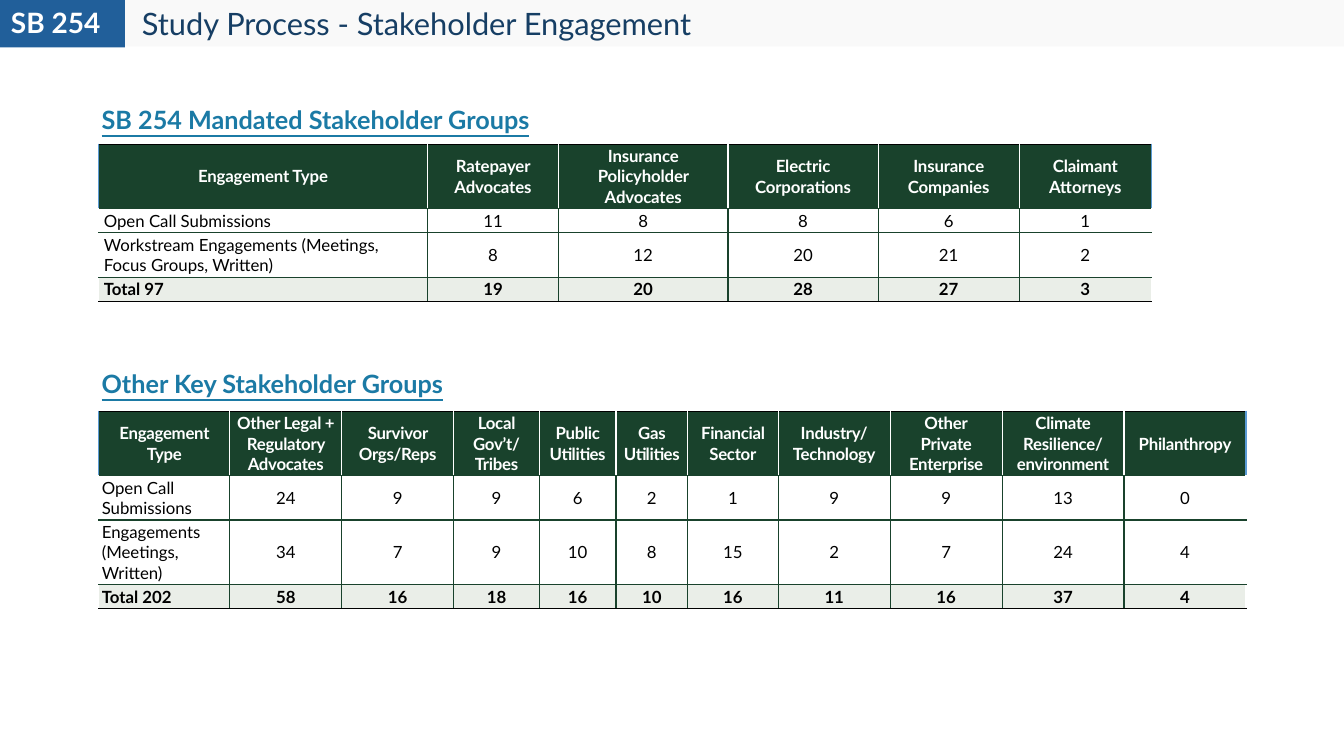
from lxml import etree
from pptx import Presentation
from pptx.dml.color import RGBColor
from pptx.enum.shapes import MSO_SHAPE
from pptx.enum.text import MSO_ANCHOR, PP_ALIGN
from pptx.oxml.ns import qn
from pptx.util import Inches, Pt

RECTANGLE = MSO_SHAPE.RECTANGLE
TOP, MIDDLE = MSO_ANCHOR.TOP, MSO_ANCHOR.MIDDLE
LEFT, CENTER = PP_ALIGN.LEFT, PP_ALIGN.CENTER

WHITE = RGBColor(0xFF, 0xFF, 0xFF)
BLACK = RGBColor(0x00, 0x00, 0x00)
BAND_GRAY = RGBColor(0xF9, 0xF9, 0xF9)
TAG_BLUE = RGBColor(0x21, 0x5F, 0x9A)
TITLE_NAVY = RGBColor(0x16, 0x3E, 0x64)
HEADING_TEAL = RGBColor(0x1B, 0x7A, 0xA5)
GREEN = RGBColor(0x19, 0x42, 0x2C)
TOTAL_GREEN = RGBColor(0xEA, 0xEE, 0xE8)
EDGE_BLUE = RGBColor(0x5B, 0x9B, 0xD5)

MANDATED_GROUPS = [
    # group, width, open call submissions, engagements
    ("Ratepayer Advocates", 1.3, 11, 8),
    ("Insurance Policyholder Advocates", 1.68, 8, 12),
    ("Electric Corporations", 1.49, 8, 20),
    ("Insurance Companies", 1.4, 6, 21),
    ("Claimant Attorneys", 1.31, 1, 2),
]
OTHER_GROUPS = [
    ("Other Legal + Regulatory Advocates", 1.11, 24, 34),
    ("Survivor Orgs/Reps", 1.11, 9, 7),
    ("Local Gov’t/\nTribes", 0.85, 9, 9),
    ("Public Utilities", 0.76, 6, 10),
    ("Gas Utilities", 0.71, 2, 8),
    ("Financial Sector", 0.9, 1, 15),
    ("Industry/\nTechnology", 1.11, 9, 2),
    ("Other\nPrivate Enterprise", 1.11, 9, 7),
    ("Climate Resilience/\nenvironment", 1.21, 13, 24),
    ("Philanthropy", 1.21, 0, 4),
]


class StakeholderSlide:
    font_name = "Lato"
    table_size = 12

    def __init__(self, slide):
        self.slide = slide

    def band(self, left, top, width, height, color):
        band = self.slide.shapes.add_shape(
            RECTANGLE, Inches(left), Inches(top), Inches(width), Inches(height))
        band.shadow.inherit = False
        band.fill.solid()
        band.fill.fore_color.rgb = color
        band.line.fill.background()

    def add_runs(self, paragraph, text, size, color, bold=False, underline=False, spacing=0):
        """Add text run by run, with a line break at each newline; spacing is in points."""
        for i, line in enumerate(text.split("\n")):
            if i:
                paragraph.add_line_break()
            run = paragraph.add_run()
            run.text = line
            font = run.font
            font.name, font.size, font.bold = self.font_name, Pt(size), bold
            font.underline = underline
            font.color.rgb = color
            if spacing:
                run._r.get_or_add_rPr().set("spc", str(round(spacing * 100)))

    def text(self, left, top, width, height, text, size, color, **style):
        frame = self.slide.shapes.add_textbox(
            Inches(left), Inches(top), Inches(width), Inches(height)).text_frame
        frame.word_wrap = True
        paragraph = frame.paragraphs[0]
        paragraph.line_spacing = 0.9
        self.add_runs(paragraph, text, size, color, **style)

    def section_heading(self, top, width, text):
        self.text(0.91, top, width, 0.41, text, 18, HEADING_TEAL, bold=True, underline=True)

    def borders(self, cell, **colors):
        properties = cell._tc.get_or_add_tcPr()
        for side, color in colors.items():
            line = etree.SubElement(properties, qn(f"a:ln{side}"), w=str(Pt(1)))
            fill = etree.SubElement(line, qn("a:solidFill"))
            etree.SubElement(fill, qn("a:srgbClr"), val=str(color))

    def engagement_table(self, top, label_width, groups, labels, heights, inset, spacing):
        """Tabulate both kinds of engagement for each group, with computed totals."""
        names, widths, submissions, engagements = zip(*groups)
        totals = [sum(pair) for pair in zip(submissions, engagements)]
        labels = ["Engagement Type", *labels, f"Total {sum(totals)}"]
        rows = [[label, *values] for label, values in
                zip(labels, (names, submissions, engagements, totals))]
        widths = [label_width, *widths]
        table = self.slide.shapes.add_table(
            len(rows), len(widths), Inches(0.98), Inches(top),
            Inches(sum(widths)), Inches(sum(heights))).table
        table.first_row = table.horz_banding = False
        for column, width in zip(table.columns, widths):
            column.width = Inches(width)
        last_row, last_column = len(rows) - 1, len(widths) - 1

        for r, (values, height) in enumerate(zip(rows, heights)):
            table.rows[r].height = Inches(height)
            header, total = r == 0, r == last_row
            inner, edge = (WHITE, EDGE_BLUE) if header else (GREEN, WHITE)
            fill = GREEN if header else TOTAL_GREEN if total else WHITE
            for c, value in enumerate(values):
                cell = table.cell(r, c)
                row_label = c == 0 and not header
                cell.margin_left = cell.margin_right = Inches(inset)
                cell.margin_top = cell.margin_bottom = Inches(0.02)
                cell.vertical_anchor = TOP if row_label else MIDDLE
                self.borders(cell,
                             L=edge if c == 0 else inner,
                             R=edge if c == last_column else inner,
                             T=BLACK if header else GREEN,
                             B=BLACK if total else GREEN)
                cell.fill.solid()
                cell.fill.fore_color.rgb = fill
                paragraph = cell.text_frame.paragraphs[0]
                paragraph.alignment = LEFT if row_label else CENTER
                self.add_runs(paragraph, str(value), self.table_size,
                              WHITE if header else BLACK, bold=header or total,
                              spacing=spacing if header else 0)


def main():
    deck = Presentation()
    deck.slide_width, deck.slide_height = Inches(13.33), Inches(7.5)
    page = StakeholderSlide(deck.slides.add_slide(deck.slide_layouts[6]))

    page.band(1.24, 0, 12.09, 0.46, BAND_GRAY)
    page.band(0, 0, 1.24, 0.47, TAG_BLUE)
    page.text(1.31, 0.04, 11.5, 0.44, "Study Process - Stakeholder Engagement", 22, TITLE_NAVY)
    page.text(0.01, 0.04, 1.22, 0.41, "SB 254", 20, WHITE, bold=True)

    page.section_heading(1.02, 11.31, "SB 254 Mandated Stakeholder Groups")
    page.engagement_table(
        1.43, 3.26, MANDATED_GROUPS,
        ["Open Call Submissions", "Workstream Engagements (Meetings, Focus Groups, Written)"],
        heights=[0.64, 0.24, 0.44, 0.24], inset=0.05, spacing=-0.1)

    page.section_heading(3.64, 7.95, "Other Key Stakeholder Groups")
    page.engagement_table(
        4.08, 1.3, OTHER_GROUPS,
        ["Open Call Submissions", "Engagements (Meetings, Written)"],
        heights=[0.64, 0.44, 0.64, 0.24], inset=0.03, spacing=-0.2)

    deck.save("out.pptx")


if __name__ == "__main__":
    main()
